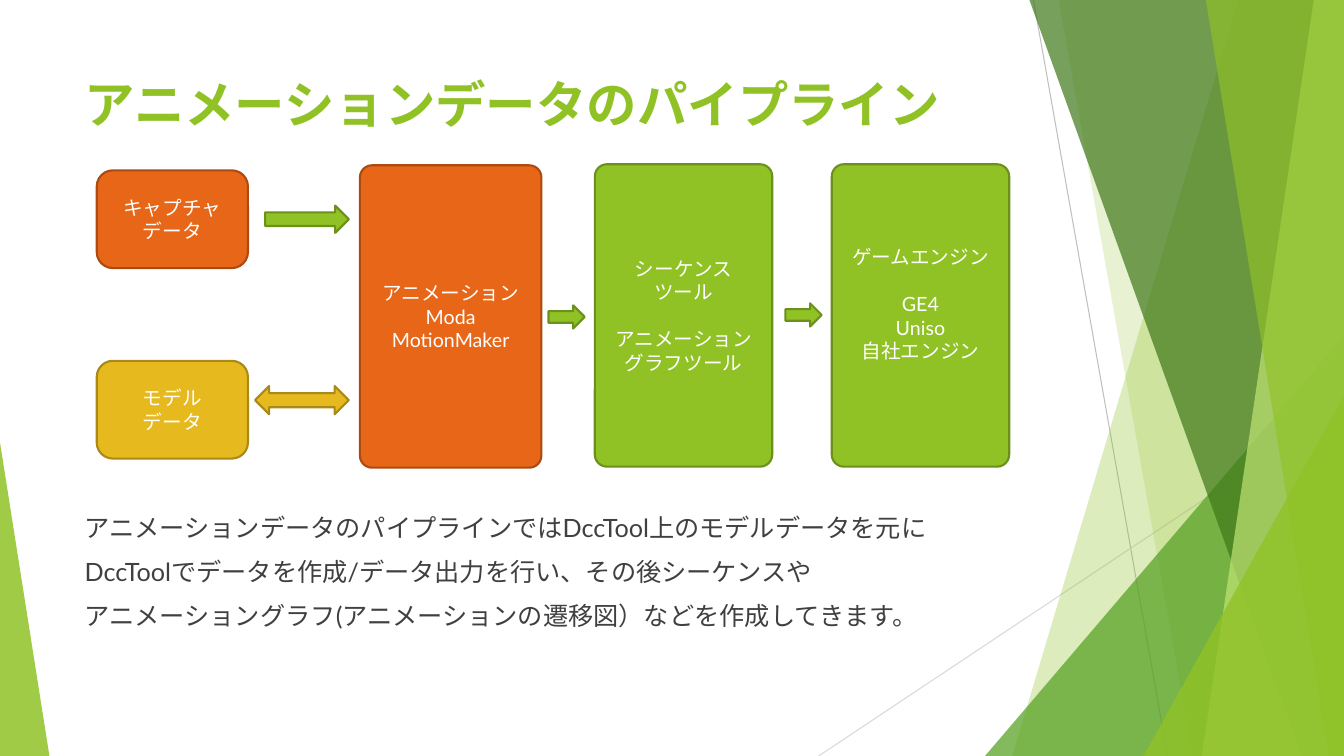
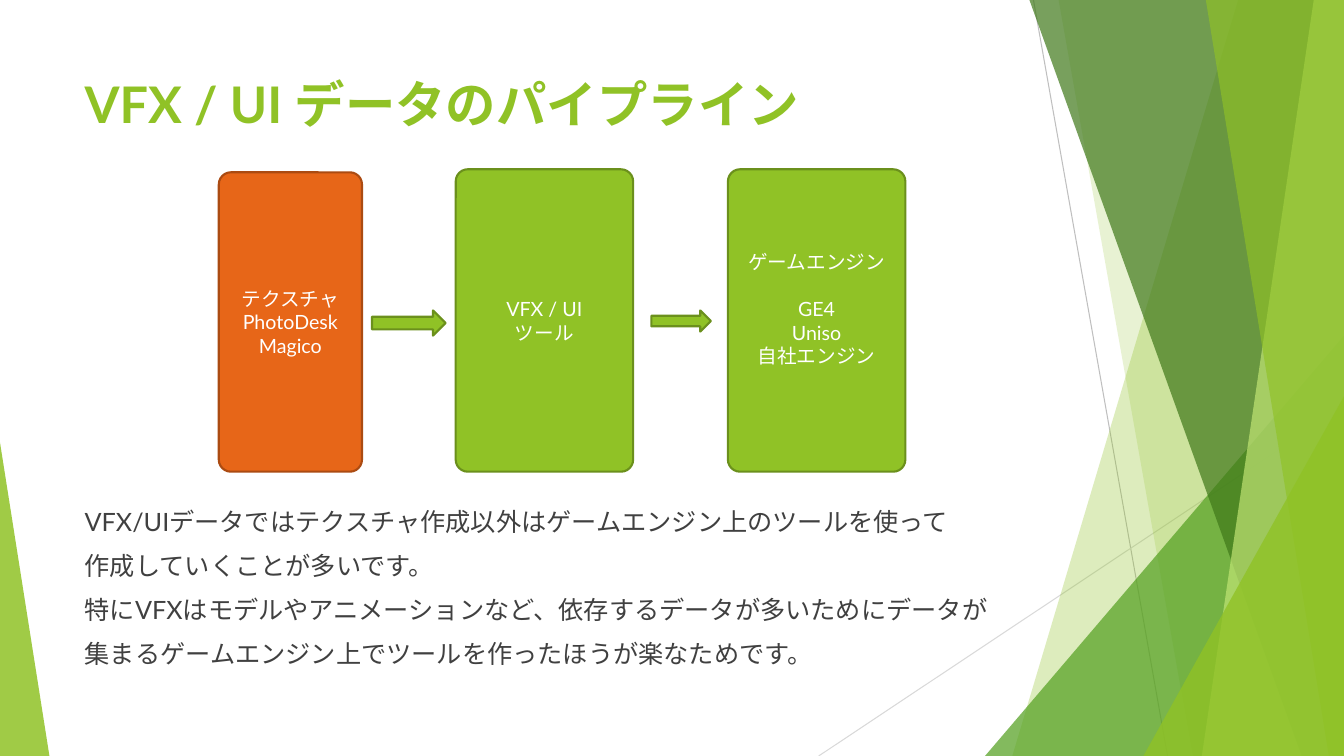
from lxml.etree import SubElement
from pptx import Presentation
from pptx.dml.color import RGBColor
from pptx.enum.lang import MSO_LANGUAGE_ID
from pptx.enum.shapes import MSO_CONNECTOR, MSO_SHAPE
from pptx.enum.text import MSO_ANCHOR, MSO_AUTO_SIZE, PP_ALIGN
from pptx.oxml.ns import qn
from pptx.util import Pt

PX = 9144  # 100 px to the inch
WIDE, HIGH = 1333, 750
FONT = "Lato"
LIME, LEAF, MOSS, PALE = "90C226", "54A021", "3F7819", "C0E474"
ORANGE, GOLD, WHITE, INK = "E76618", "E6B91E", "FFFFFF", "404040"
EDGE = {LIME: "6B901C", ORANGE: "AB4B12", GOLD: "AA8916"}

TITLE = {"size": Pt(36), "bold": True, "color": LIME}
BODY = {"size": Pt(18), "color": INK}
LABEL = {"size": Pt(14), "color": WHITE}
GAP = Pt(17)

LINES = [(1025, 0, 1158, HIGH, "BFBFBF"), (WIDE, 403, 812, HIGH, "D9D9D9")]
# Bands run from (top x, foot x) to the right edge; triangles are (box, tip).
BLADES = [
    ("band", (1228, 1004), LIME, 30),
    ("band", (1050, 1183), LIME, 20),
    ("tri", ((977, 333, 356, 417), 1), LEAF, 72),
    ("band", (1021, 1291), MOSS, 70),
    ("band", (1303, 1192), PALE, 70),
    ("band", (1196, 1318), LIME, 65),
    ("tri", ((1134, 393, 199, 357), 1), LIME, 80),
    ("tri", ((0, 439, 49, 311), 0), LIME, 85),
]

RIGHT, BOTH = MSO_SHAPE.RIGHT_ARROW, MSO_SHAPE.LEFT_RIGHT_ARROW
ENGINE = "ゲームエンジン\n\nGE4\nUniso\n自社エンジン"
RAISED = 28  # foot inset that lifts the engine label by half a line

# Cards: box, colour, label, corner, foot inset. Arrows: box, colour, kind.
PAGES = [
    {
        "title": "アニメーションデータのパイプライン",
        "origin": (96, 163),
        "cards": [
            ((0, 6, 150, 97), ORANGE, "キャプチャ\nデータ", 16, 5),
            ((0, 195, 150, 97), GOLD, "モデル\nデータ", 16, 5),
            ((261, 1, 180, 300), ORANGE,
             "アニメーション\nModa\nMotionMaker", 12, 5),
            ((494, 0, 176, 300), LIME,
             "シーケンス\nツール\n\nアニメーション\nグラフツール", 12, 5),
            ((729, 0, 176, 300), LIME, ENGINE, 12, RAISED),
        ],
        "arrows": [
            ((167, 41, 83, 27), LIME, RIGHT),
            ((157, 220, 93, 28), GOLD, BOTH),
            ((448, 140, 36, 23), LIME, RIGHT),
            ((683, 138, 36, 23), LIME, RIGHT),
        ],
        "body": ("アニメーションデータのパイプラインではDccTool上のモデルデータを元に\n"
                 "DccToolでデータを作成/データ出力を行い、その後シーケンスや\n"
                 "アニメーショングラフ(アニメーションの遷移図）などを作成してきます。"),
        "box": (74, 503, 940, 186),
    },
    {
        "title": "VFX / UI データのパイプライン",
        "origin": (217, 168),
        "cards": [
            ((0, 3, 142, 297), ORANGE, "テクスチャ\nPhotoDesk\nMagico", 12, 5),
            ((235, 0, 176, 300), LIME, "VFX / UI\nツール", 12, 5),
            ((505, 0, 176, 300), LIME, ENGINE, 12, RAISED),
        ],
        "arrows": [
            ((152, 140, 73, 25), LIME, RIGHT),
            ((429, 140, 59, 21), LIME, RIGHT),
        ],
        "body": ("VFX/UIデータではテクスチャ作成以外はゲームエンジン上のツールを使って\n"
                 "作成していくことが多いです。\n"
                 "特にVFXはモデルやアニメーションなど、依存するデータが多いためにデータが\n"
                 "集まるゲームエンジン上でツールを作ったほうが楽なためです。"),
        "box": (74, 497, 940, 211),
    },
]


def emu(*nums):
    return [round(n * PX) for n in nums]


def rgb(code):
    return RGBColor.from_string(code)


def put(item, **vals):
    for key, val in vals.items():
        setattr(item, key, val)


def place(shape, box):
    put(shape, **dict(zip(("left", "top", "width", "height"), emu(*box))))


def paint(shape, code, edge=None, alpha=None):
    shape.shadow.inherit = False
    shape.fill.solid()
    shape.fill.fore_color.rgb = rgb(code)
    if alpha is not None:
        tone = shape.element.spPr.find(".//" + qn("a:srgbClr"))
        SubElement(tone, qn("a:alpha")).set("val", str(alpha * 1000))
    if edge:
        shape.line.color.rgb = rgb(edge)
        shape.line.width = Pt(1.5)
    else:
        shape.line.fill.background()


def write(frame, text, style, align, before=0):
    """Write one paragraph a line; a double break opens a gap."""
    put(frame, word_wrap=True, auto_size=MSO_AUTO_SIZE.NONE)
    look = dict(style)
    tint = rgb(look.pop("color"))
    rows = [(line, GAP if part and not row else before)
            for part, group in enumerate(text.split("\n\n"))
            for row, line in enumerate(group.split("\n"))]
    for num, (line, space) in enumerate(rows):
        para = frame.add_paragraph() if num else frame.paragraphs[0]
        put(para, alignment=align, space_before=space)
        run = para.add_run()
        run.text = line
        put(run.font, name=FONT, language_id=MSO_LANGUAGE_ID.JAPANESE, **look)
        run.font.color.rgb = tint
        SubElement(run._r.rPr, qn("a:ea")).set("typeface", FONT)


def band(slide, ends):
    top, foot = ends
    pen = slide.shapes.build_freeform(top, 0, scale=PX)
    pen.add_line_segments([(WIDE, 0), (WIDE, HIGH), (foot, HIGH)], close=True)
    return pen.convert_to_shape()


def tri(slide, form):
    box, tip = form
    shape = slide.shapes.add_shape(MSO_SHAPE.ISOSCELES_TRIANGLE, *emu(*box))
    shape.adjustments[0] = tip
    return shape


def dress(layout, slide):
    """Draw the facets on the slide, then move them to the back of its layout."""
    for mark in list(layout.placeholders):
        if mark.placeholder_format.idx >= 10:
            mark.element.getparent().remove(mark.element)
    parts = []
    for *ends, code in LINES:
        line = slide.shapes.add_connector(MSO_CONNECTOR.STRAIGHT, *emu(*ends))
        line.line.color.rgb = rgb(code)
        line.line.width = Pt(0.75)
        SubElement(line.element.spPr, qn("a:effectLst"))
        parts.append(line)
    make = {"band": band, "tri": tri}
    for kind, form, code, alpha in BLADES:
        shape = make[kind](slide, form)
        paint(shape, code, alpha=alpha)
        parts.append(shape)
    for num, part in enumerate(parts):
        layout.shapes.element.insert(2 + num, part.element)


def head(slide, text):
    title = slide.shapes.title
    place(title, (74, 67, 940, 72))
    title.text_frame.vertical_anchor = MSO_ANCHOR.MIDDLE
    write(title.text_frame, text, TITLE, PP_ALIGN.LEFT)


def prose(slide, box, text):
    body = slide.placeholders[1]
    place(body, box)
    write(body.text_frame, text, BODY, PP_ALIGN.LEFT, Pt(10))
    for para in body.text_frame.paragraphs:
        props = para._p.get_or_add_pPr()
        props.set("marL", "0")
        props.set("indent", "0")
        SubElement(props, qn("a:buNone"))


def card(slide, box, code, text, corner, foot):
    shape = slide.shapes.add_shape(MSO_SHAPE.ROUNDED_RECTANGLE, *emu(*box))
    shape.adjustments[0] = corner / min(box[2:])
    paint(shape, code, EDGE[code])
    put(shape.text_frame, vertical_anchor=MSO_ANCHOR.MIDDLE,
        margin_bottom=foot * PX)
    write(shape.text_frame, text, LABEL, PP_ALIGN.CENTER)


def flow(slide, origin, cards, arrows):
    def shift(box):
        return (origin[0] + box[0], origin[1] + box[1], *box[2:])

    for box, *rest in cards:
        card(slide, shift(box), *rest)
    for box, code, kind in arrows:
        shape = slide.shapes.add_shape(kind, *emu(*shift(box)))
        paint(shape, code, EDGE[code])


def main():
    deck = Presentation()
    put(deck, slide_width=WIDE * PX, slide_height=HIGH * PX)
    layout = deck.slide_layouts[1]
    for num, page in enumerate(PAGES):
        slide = deck.slides.add_slide(layout)
        if num == 0:
            dress(layout, slide)
        head(slide, page["title"])
        prose(slide, page["box"], page["body"])
        flow(slide, page["origin"], page["cards"], page["arrows"])
    deck.save("out.pptx")


if __name__ == "__main__":
    main()
